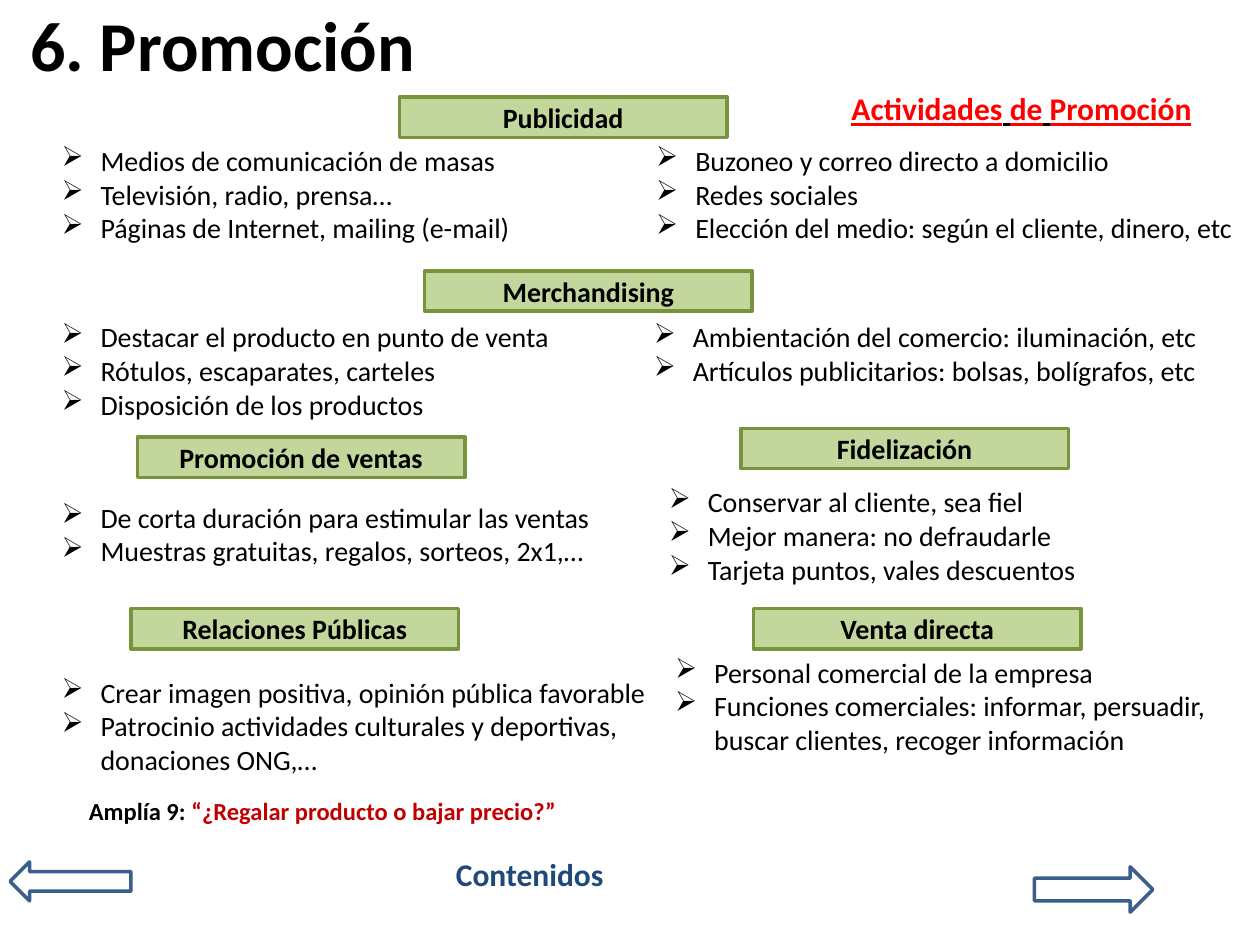
from dataclasses import dataclass

from lxml.etree import SubElement
from pptx import Presentation
from pptx.dml.color import RGBColor
from pptx.enum.shapes import MSO_SHAPE
from pptx.enum.text import MSO_ANCHOR, PP_ALIGN
from pptx.oxml.ns import qn
from pptx.util import Inches, Pt


@dataclass(frozen=True)
class Theme:
    font: str = "Calibri"
    black: str = "000000"
    red: str = "FF0000"
    dark_red: str = "C00000"
    navy: str = "1F497D"
    green: str = "C3D69B"
    green_line: str = "77933C"
    arrow_line: str = "3A5F8C"
    title: int = 40
    heading: int = 18
    body: int = 16
    note: int = 14


THEME = Theme()
HEADER_W, HEADER_H = 2.6, 0.32
LINE_H, INDENT = 0.27, 0.31

# Each section: left, top, header offset, header, lists of (dx, dy, width, items)
SECTIONS = [
    (0.39, 0.77, 2.78, "Publicidad", [
        (0, 0.32, 4.7, ["Medios de comunicación de masas",
                        "Televisión, radio, prensa…",
                        "Páginas de Internet, mailing (e-mail)"]),
        (4.72, 0.32, 4.88, ["Buzoneo y correo directo a domicilio",
                            "Redes sociales",
                            "Elección del medio: según el cliente, dinero, etc"])]),
    (0.39, 2.15, 2.98, "Merchandising", [
        (0, 0.34, 4.7, ["Destacar el producto en punto de venta",
                        "Rótulos, escaparates, carteles",
                        "Disposición de los productos"]),
        (4.7, 0.34, 4.88, ["Ambientación del comercio: iluminación, etc",
                           "Artículos publicitarios: bolsas, bolígrafos, etc"])]),
    (0.39, 3.47, 0.7, "Promoción de ventas", [
        (0, 0.45, 4.57, ["De corta duración para estimular las ventas",
                         "Muestras gratuitas, regalos, sorteos, 2x1,…"])]),
    (5.21, 3.4, 0.67, "Fidelización", [
        (0, 0.4, 3.57, ["Conservar al cliente, sea fiel",
                        "Mejor manera: no defraudarle",
                        "Tarjeta puntos, vales descuentos"])]),
    (0.39, 4.83, 0.65, "Relaciones Públicas", [
        (0, 0.48, 4.9, ["Crear imagen positiva, opinión pública favorable",
                        "Patrocinio actividades culturales y deportivas, donaciones ONG,…"])]),
    (5.26, 4.83, 0.72, "Venta directa", [
        (0, 0.32, 4.72, ["Personal comercial de la empresa",
                         "Funciones comerciales: informar, persuadir, "
                         "buscar clientes, recoger información"])]),
]


def add_run(p, text, size, color, bold=False, underline=None):
    r = p.add_run()
    r.text = text
    r.font.name, r.font.size = THEME.font, Pt(size)
    r.font.bold, r.font.underline = bold, underline
    r.font.color.rgb = RGBColor.from_string(color)


def add_text(slide, x, y, w, h, parts, size, underline=None):
    """Add one bold line made of (text, colour) parts."""
    sp = slide.shapes.add_textbox(Inches(x), Inches(y), Inches(w), Inches(h))
    tf = sp.text_frame
    tf.word_wrap = True
    for text, color in parts:
        add_run(tf.paragraphs[0], text, size, color, True, underline)
    return tf


def add_outlined(slide, kind, x, y, w, h, line):
    sp = slide.shapes.add_shape(kind, Inches(x), Inches(y), Inches(w), Inches(h))
    sp.shadow.inherit = False
    sp.fill.background()
    sp.line.color.rgb = RGBColor.from_string(line)
    sp.line.width = Pt(2)
    return sp


def add_header(slide, x, y, text):
    sp = add_outlined(slide, MSO_SHAPE.RECTANGLE, x, y, HEADER_W, HEADER_H, THEME.green_line)
    sp.fill.solid()
    sp.fill.fore_color.rgb = RGBColor.from_string(THEME.green)
    tf = sp.text_frame
    tf.vertical_anchor = MSO_ANCHOR.MIDDLE
    tf.paragraphs[0].alignment = PP_ALIGN.CENTER
    add_run(tf.paragraphs[0], text, THEME.body, THEME.black, True)


def add_bullets(slide, x, y, w, items):
    h = 0.1 + LINE_H * len(items)
    sp = slide.shapes.add_textbox(Inches(x), Inches(y), Inches(w), Inches(h))
    tf = sp.text_frame
    tf.word_wrap = True
    for i, item in enumerate(items):
        p = tf.paragraphs[0] if i == 0 else tf.add_paragraph()
        pPr = p._p.get_or_add_pPr()
        pPr.set("marL", str(Inches(INDENT)))
        pPr.set("indent", str(-Inches(INDENT)))
        SubElement(pPr, qn("a:buChar")).set("char", "➢")
        add_run(p, item, THEME.body, THEME.black)


def add_section(slide, x, y, header_dx, header, lists):
    add_header(slide, x + header_dx, y, header)
    for dx, dy, w, items in lists:
        add_bullets(slide, x + dx, y + dy, w, items)


def add_heading(slide, x, y):
    tf = add_text(slide, x, y, 9.42, 0.63, [("6. Promoción", THEME.black)], THEME.title)
    tf.vertical_anchor = MSO_ANCHOR.MIDDLE
    parts = [("Actividades", THEME.red), (" ", THEME.black), ("de", THEME.red),
             (" ", THEME.black), ("Promoción", THEME.red)]
    add_text(slide, x + 6.52, y + 0.63, 3.04, 0.4, parts, THEME.heading, True)


def add_footer(slide, x, y):
    # Further reading
    tf = add_text(slide, x + 0.46, y, 4.04, 0.34,
                  [("Amplía 9:", THEME.black),
                   (" “¿Regalar producto o bajar precio?”", THEME.dark_red)], THEME.note)
    tf.word_wrap = False
    tf.paragraphs[0].alignment = PP_ALIGN.CENTER
    # Navigation
    add_text(slide, x + 3.44, y + 0.47, 1.44, 0.4, [("Contenidos", THEME.navy)], THEME.heading)
    for kind, dx, dy, w, h in [(MSO_SHAPE.LEFT_ARROW, 0, 0.57, 0.96, 0.31),
                               (MSO_SHAPE.RIGHT_ARROW, 8.13, 0.61, 0.94, 0.36)]:
        add_outlined(slide, kind, x + dx, y + dy, w, h, THEME.arrow_line)


def main():
    prs = Presentation()
    prs.slide_width, prs.slide_height = Inches(10), Inches(7.5)
    s = prs.slides.add_slide(prs.slide_layouts[6])
    add_heading(s, 0.14, 0.03)
    for section in SECTIONS:
        add_section(s, *section)
    add_footer(s, 0.08, 6.27)
    prs.save("out.pptx")


if __name__ == "__main__":
    main()
